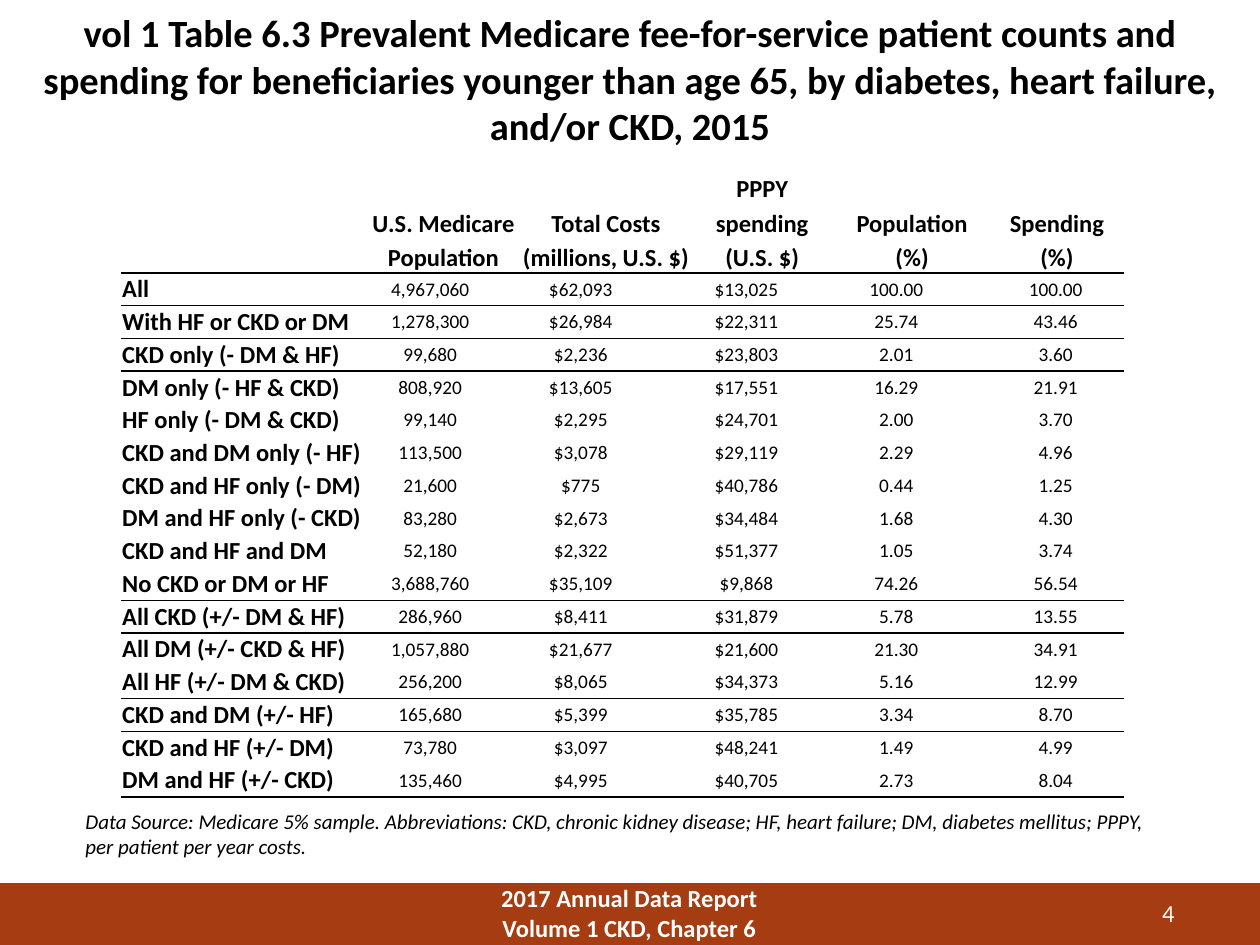
from dataclasses import dataclass

from lxml.etree import SubElement
from pptx import Presentation
from pptx.dml.color import RGBColor
from pptx.enum.shapes import MSO_SHAPE
from pptx.enum.text import MSO_ANCHOR, PP_ALIGN
from pptx.oxml.ns import qn
from pptx.util import Inches, Pt

BLACK, WHITE, RUST = "000000", "FFFFFF", "A63C12"
NO_GRID = "{2D5ABB26-0587-4C30-8999-92F81FD0307C}"


@dataclass
class Column:
    head: str
    width: float
    right: float = 0  # right cell margin of the figures
    indent: float = 0


@dataclass
class Note:
    text: str
    box: tuple[float, float, float, float]
    size: int
    color: str
    align: PP_ALIGN = PP_ALIGN.LEFT
    bold: bool = False
    italic: bool = False


COLUMNS = [
    Column("", 1.94, indent=0.01),
    Column("U.S. Medicare\vPopulation", 1.24, 0.21),
    Column("Total Costs\v(millions, U.S. $)", 1.34, 0.4),
    Column("PPPY spending (U.S. $)", 1.14, 0.25),
    Column("Population\v(%)", 1.24, 0.25),
    Column("Spending\v(%)", 1.06, 0.2, 0.18),
]
ROWS = [
    ("All", "4,967,060", "$62,093", "$13,025", "100.00", "100.00"),
    ("With HF or CKD or DM", "1,278,300", "$26,984", "$22,311", "25.74", "43.46"),
    ("CKD only (- DM & HF)", "99,680", "$2,236", "$23,803", "2.01", "3.60"),
    ("DM only (- HF & CKD)", "808,920", "$13,605", "$17,551", "16.29", "21.91"),
    ("HF only (- DM & CKD)", "99,140", "$2,295", "$24,701", "2.00", "3.70"),
    ("CKD and DM only (- HF)", "113,500", "$3,078", "$29,119", "2.29", "4.96"),
    ("CKD and HF only (- DM)", "21,600", "$775", "$40,786", "0.44", "1.25"),
    ("DM and HF only (- CKD)", "83,280", "$2,673", "$34,484", "1.68", "4.30"),
    ("CKD and HF and DM", "52,180", "$2,322", "$51,377", "1.05", "3.74"),
    ("No CKD or DM or HF", "3,688,760", "$35,109", "$9,868", "74.26", "56.54"),
    ("All CKD (+/- DM & HF)", "286,960", "$8,411", "$31,879", "5.78", "13.55"),
    ("All DM (+/- CKD & HF)", "1,057,880", "$21,677", "$21,600", "21.30", "34.91"),
    ("All HF (+/- DM & CKD)", "256,200", "$8,065", "$34,373", "5.16", "12.99"),
    ("CKD and DM (+/- HF)", "165,680", "$5,399", "$35,785", "3.34", "8.70"),
    ("CKD and HF (+/- DM)", "73,780", "$3,097", "$48,241", "1.49", "4.99"),
    ("DM and HF (+/- CKD)", "135,460", "$4,995", "$40,705", "2.73", "8.04"),
]
RULED = {0, 1, 2, 10, 13, 16}  # table rows with a line below

NOTES = [
    Note("2017 Annual Data Report\nVolume 1 CKD, Chapter 6", (3.58, 6.96, 2.83, 0.54),
         14, WHITE, PP_ALIGN.CENTER, bold=True),
    Note("4", (8.42, 7.08, 1, 0.3), 14, WHITE, PP_ALIGN.RIGHT),
    Note("Data Source: Medicare 5% sample. Abbreviations: CKD, chronic kidney disease; "
         "HF, heart failure; DM, diabetes mellitus; PPPY, per patient per year costs.",
         (0.58, 6.37, 8.83, 0.5), 12, BLACK, italic=True),
]


def paint(color: str) -> RGBColor:
    return RGBColor.from_string(color)


def style(frame, size: int, color: str, align: PP_ALIGN, bold=False, italic=False) -> None:
    for par in frame.paragraphs:
        par.alignment = align
        for run in par.runs:
            font = run.font
            font.name, font.size = "Calibri", Pt(size)
            font.bold, font.italic = bold, italic
            font.color.rgb = paint(color)


def add_note(slide, note: Note) -> None:
    frame = slide.shapes.add_textbox(*map(Inches, note.box)).text_frame
    frame.word_wrap = True
    frame.text = note.text
    style(frame, note.size, note.color, note.align, note.bold, note.italic)


def add_bar(slide) -> None:
    bar = slide.shapes.add_shape(MSO_SHAPE.RECTANGLE, 0, Inches(7.01), Inches(10), Inches(0.5))
    bar.shadow.inherit = False
    bar.fill.solid()
    bar.fill.fore_color.rgb = paint(RUST)
    bar.line.fill.background()


def add_title(slide, text: str) -> None:
    title = slide.shapes.title
    title.left, title.top, title.width, title.height = map(Inches, (0, 0, 10, 1.25))
    title.text_frame.text = text
    style(title.text_frame, 22, BLACK, PP_ALIGN.CENTER, bold=True)


def rule_cell(cell, row: int) -> None:
    """Draw the lines above and below a cell, ahead of its fill."""
    props = cell._tc.get_or_add_tcPr()
    sides = [("a:lnT", row - 1), ("a:lnB", row)]
    for spot, side in enumerate(side for side, edge in sides if edge in RULED):
        line = SubElement(props, qn(side), w=str(Pt(1)))
        fill = SubElement(line, qn("a:solidFill"))
        SubElement(fill, qn("a:srgbClr"), val=BLACK)
        props.insert(spot, line)


def fill_cell(cell, text: str, row: int, col: int) -> None:
    column = COLUMNS[col]
    head, label = row == 0, col == 0
    cell.margin_left = cell.margin_top = cell.margin_bottom = 0
    cell.margin_right = 0 if head else Inches(column.right)
    cell.vertical_anchor = MSO_ANCHOR.BOTTOM if head else MSO_ANCHOR.MIDDLE
    cell.text_frame.text = text
    par = cell.text_frame.paragraphs[0]
    if head:
        par.line_spacing = 1.15
    elif column.indent:
        props = par._p.get_or_add_pPr()
        props.set("marL", str(Inches(column.indent)))
        props.set("indent", "0")
    strong = head or label
    style(cell.text_frame, 14 if strong else 11, BLACK,
          PP_ALIGN.LEFT if label else PP_ALIGN.CENTER, bold=strong)
    cell.fill.background()
    rule_cell(cell, row)


def add_costs(slide) -> None:
    lines = [tuple(column.head for column in COLUMNS), *ROWS]
    width = sum(column.width for column in COLUMNS)
    frame = slide.shapes.add_table(len(lines), len(COLUMNS), Inches(0.96), Inches(1.35),
                                   Inches(width), Inches(4.96))
    table = frame.table
    table.first_row = table.horz_banding = False
    for tag in frame.element.iter(qn("a:tableStyleId")):
        tag.text = NO_GRID
    for col, column in enumerate(COLUMNS):
        table.columns[col].width = Inches(column.width)
    for row, line in enumerate(lines):
        table.rows[row].height = Inches(0.26 if row else 0.49)
        for col, text in enumerate(line):
            fill_cell(table.cell(row, col), text, row, col)


def main() -> None:
    deck = Presentation()
    deck.slide_width, deck.slide_height = Inches(10), Inches(7.5)
    slide = deck.slides.add_slide(deck.slide_layouts[5])
    add_bar(slide)
    add_title(slide, "vol 1 Table 6.3 Prevalent Medicare fee-for-service patient counts and "
                     "spending for beneficiaries younger than age 65, by diabetes, "
                     "heart failure, and/or CKD, 2015")
    add_costs(slide)
    for note in NOTES:
        add_note(slide, note)
    deck.save("out.pptx")


if __name__ == "__main__":
    main()
